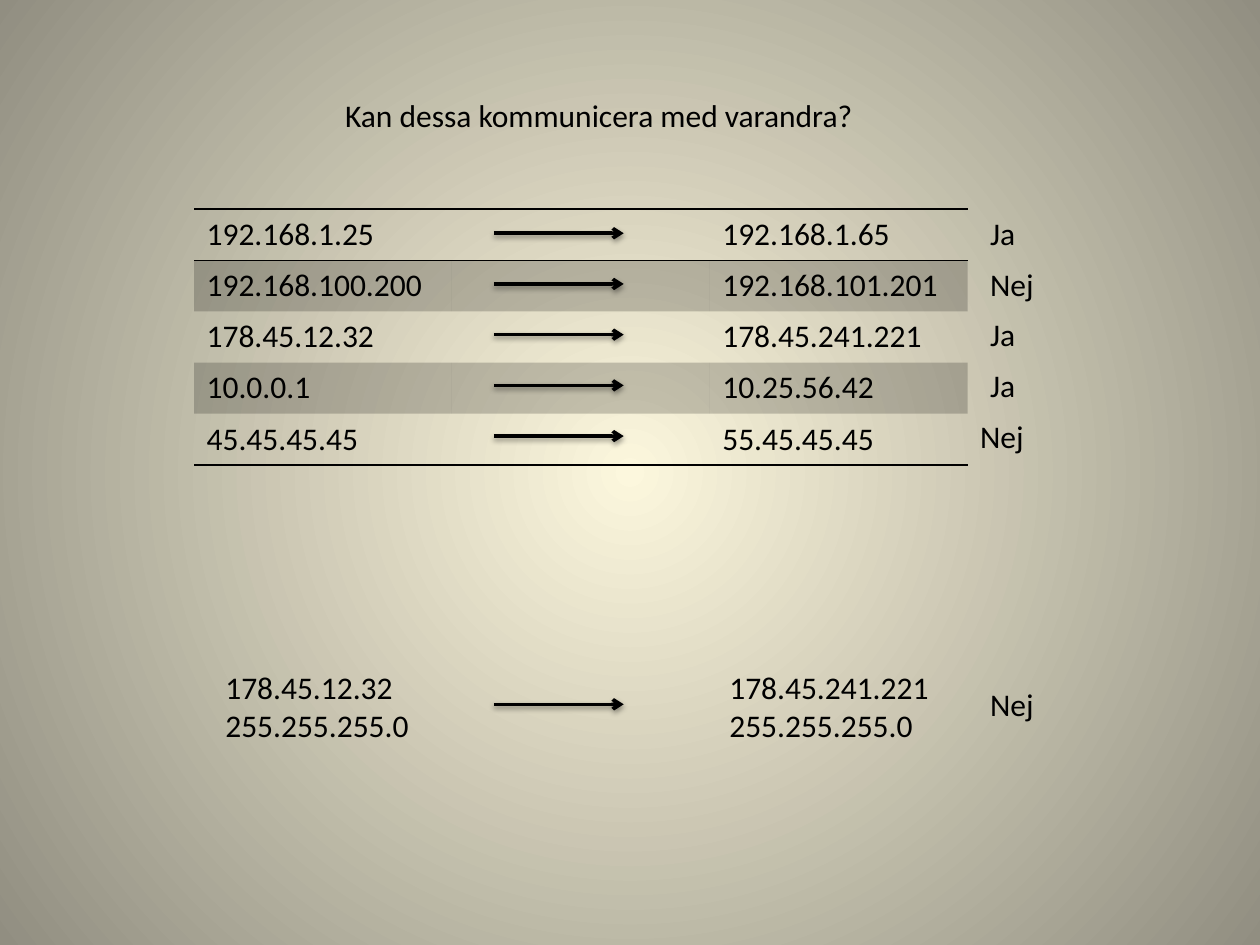
from lxml import etree
from pptx import Presentation
from pptx.dml.color import RGBColor
from pptx.enum.shapes import MSO_CONNECTOR
from pptx.enum.text import MSO_AUTO_SIZE
from pptx.oxml import parse_xml
from pptx.oxml.ns import nsdecls, qn
from pptx.util import Inches, Pt

STRAIGHT = MSO_CONNECTOR.STRAIGHT
FIT_SHAPE = MSO_AUTO_SIZE.SHAPE_TO_FIT_TEXT
BLACK = "000000"
FONT = "Calibri"
NO_STYLE = "{2D5ABB26-0587-4C30-8999-92F81FD0307C}"
WIDTH, HEIGHT = 10, 7.5
TABLE_LEFT, TABLE_TOP, TABLE_WIDTH, TABLE_HEIGHT = 1.54, 1.66, 6.14, 2.03
ANSWER_LEFT, ANSWER_TOP, ANSWER_BOTTOM = 7.76, 1.65, 3.26
ARROW_LEFT, ARROW_RIGHT = 3.92, 4.95
PAIRS = [
    ("192.168.1.25", "192.168.1.65", "Ja"),
    ("192.168.100.200", "192.168.101.201", "Nej"),
    ("178.45.12.32", "178.45.241.221", "Ja"),
    ("10.0.0.1", "10.25.56.42", "Ja"),
    ("45.45.45.45", "55.45.45.45", "Nej"),
]


def color(value):
    """Turn a hex string into a colour."""
    return RGBColor.from_string(value)


def set_tabs(para, stops):
    """Set left tab stops, in inches, on a paragraph."""
    tabs = "".join(f'<a:tab pos="{Inches(stop)}" algn="l"/>' for stop in stops)
    para._p.get_or_add_pPr().insert(
        0, parse_xml(f'<a:tabLst {nsdecls("a")}>{tabs}</a:tabLst>'))


def write(frame, text, size=18, font=FONT, ink=BLACK, tabs=()):
    """Fill a text frame with one paragraph for each line of text."""
    for index, line in enumerate(text.split("\n")):
        para = frame.paragraphs[0] if index == 0 else frame.add_paragraph()
        if tabs:
            set_tabs(para, tabs)
        span = para.add_run()
        span.text = line
        span.font.size = Pt(size)
        span.font.name = font
        span.font.color.rgb = color(ink)


def add_text(slide, text, left, top, width, height=0.4, **style):
    """Add an unwrapped text box."""
    box = slide.shapes.add_textbox(*map(Inches, (left, top, width, height)))
    box.text_frame.word_wrap = False
    box.text_frame.auto_size = FIT_SHAPE
    write(box.text_frame, text, **style)


def add_answer(slide, text, top, left=ANSWER_LEFT):
    """Add a yes or no beside a pair of addresses."""
    add_text(slide, text, left, top, 0.4 if text == "Ja" else 0.55)


def add_arrow(slide, y):
    """Add a horizontal arrow with a soft shadow below it."""
    arrow = slide.shapes.add_connector(
        STRAIGHT, Inches(ARROW_LEFT), Inches(y), Inches(ARROW_RIGHT), Inches(y))
    arrow.line.color.rgb = color(BLACK)
    arrow.line.width = Pt(2)
    outline = arrow.element.spPr.find(qn("a:ln"))
    etree.SubElement(outline, qn("a:tailEnd"), type="arrow")
    arrow.element.spPr.append(parse_xml(
        f'<a:effectLst {nsdecls("a")}><a:outerShdw blurRad="{Pt(3.1)}" '
        f'dist="{Pt(1.6)}" dir="5400000" rotWithShape="0"><a:srgbClr val="{BLACK}">'
        '<a:alpha val="38000"/></a:srgbClr></a:outerShdw></a:effectLst>'))


def add_border(cell, side):
    """Draw a thin rule on one side of a cell."""
    cell._tc.get_or_add_tcPr().append(parse_xml(
        f'<a:{side} {nsdecls("a")} w="{Pt(1)}"><a:solidFill>'
        f'<a:srgbClr val="{BLACK}"/></a:solidFill></a:{side}>'))


def shade(cell, opacity):
    """Give a cell a translucent black fill."""
    cell.fill.solid()
    cell.fill.fore_color.rgb = color(BLACK)
    tint = cell._tc.tcPr.find(qn("a:solidFill")).find(qn("a:srgbClr"))
    etree.SubElement(tint, qn("a:alpha"), val=str(opacity * 1000))


def add_address_table(slide):
    """Add the banded table of sender and receiver addresses."""
    count = len(PAIRS)
    frame = slide.shapes.add_table(
        count, 3, *map(Inches, (TABLE_LEFT, TABLE_TOP, TABLE_WIDTH, TABLE_HEIGHT)))
    table = frame.table
    table.first_row = table.horz_banding = False
    next(table._tbl.iter(qn("a:tableStyleId"))).text = NO_STYLE
    for index, (sender, receiver, _) in enumerate(PAIRS):
        for column, text in enumerate((sender, "", receiver)):
            cell = table.cell(index, column)
            write(cell.text_frame, text)
            if index == 0:
                add_border(cell, "lnT")
            if index in (0, count - 1):
                add_border(cell, "lnB")
            if index % 2:
                shade(cell, 20)
            else:
                cell.fill.background()


def paint_background(slide, center, edge):
    """Paint a circular gradient from the middle of the slide."""
    fill = slide.background.fill
    fill.gradient()
    for stop, position, value in zip(fill.gradient_stops, (0, 1), (center, edge)):
        stop.color.rgb = color(value)
        stop.position = position
    gradient = next(slide.element.iter(qn("a:gradFill")))
    gradient.replace(gradient.find(qn("a:lin")), parse_xml(
        f'<a:path {nsdecls("a")} path="circle">'
        '<a:fillToRect l="50000" t="50000" r="50000" b="50000"/></a:path>'))


def main():
    """Build and save the slide."""
    deck = Presentation()
    deck.slide_width, deck.slide_height = Inches(WIDTH), Inches(HEIGHT)
    slide = deck.slides.add_slide(deck.slide_layouts[6])
    paint_background(slide, "FCF7DD", "918E81")
    add_text(slide, "Kan dessa kommunicera med varandra?", 2.64, 0.71, 4.28)
    add_address_table(slide)
    last = len(PAIRS) - 1
    step = (ANSWER_BOTTOM - ANSWER_TOP) / last
    for index, (_, _, answer) in enumerate(PAIRS):
        top = ANSWER_TOP + index * step
        add_arrow(slide, top + step / 2)
        add_answer(slide, answer, top, 7.68 if index == last else ANSWER_LEFT)
    add_text(slide, "178.45.12.32\t\t\t178.45.241.221\n255.255.255.0\t\t\t255.255.255.0",
             1.69, 5.25, 5.84, 0.71, tabs=(2, 3, 4))
    add_arrow(slide, 5.59)
    add_answer(slide, "Nej", 5.39)
    deck.save("out.pptx")


if __name__ == "__main__":
    main()
